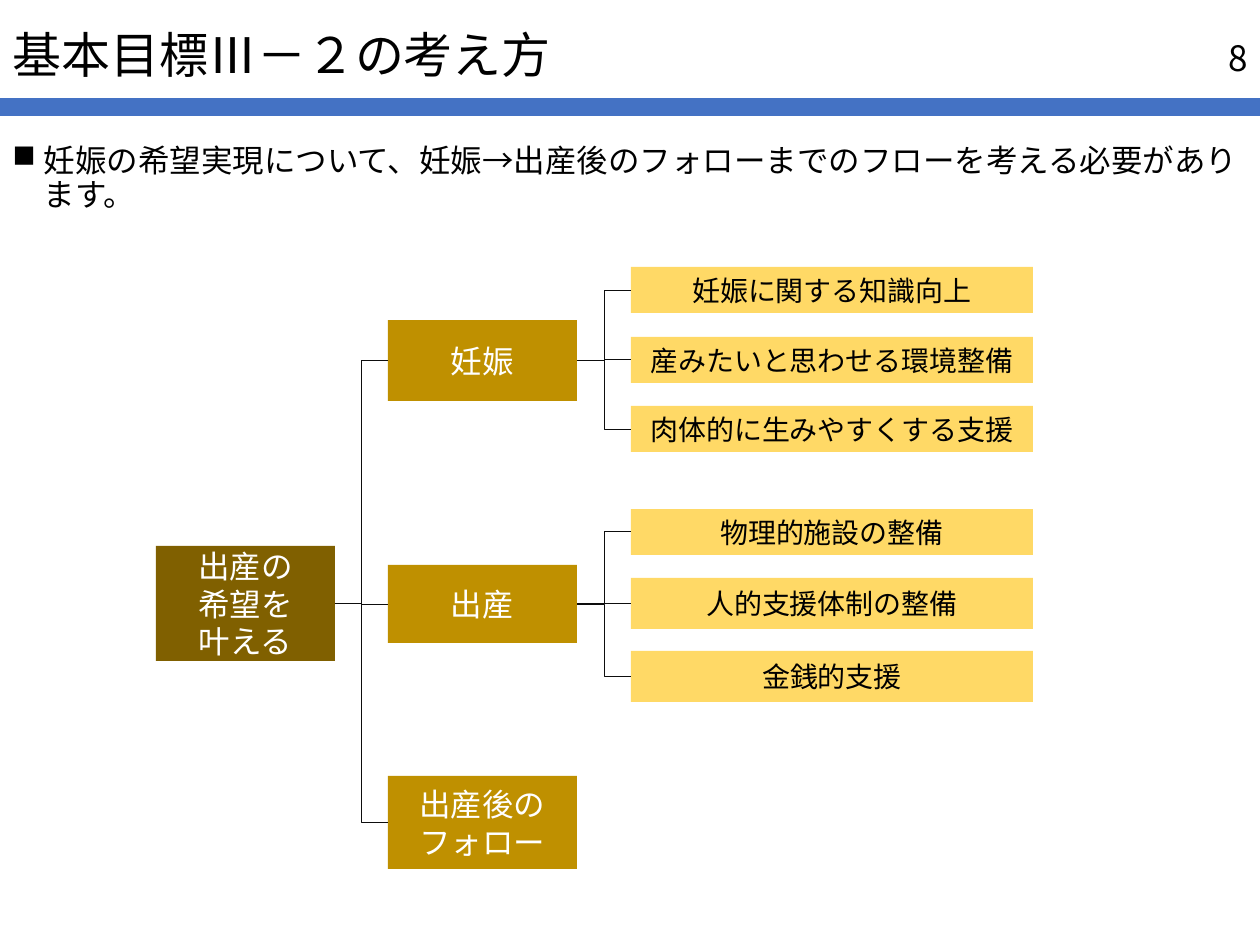
import dataclasses

import pptx
import pptx.dml.color
import pptx.enum.shapes
import pptx.enum.text
import pptx.oxml
import pptx.oxml.ns
import pptx.util

PX = 914400 / 126
ALIGN = pptx.enum.text.PP_ALIGN
ANCHOR = pptx.enum.text.MSO_ANCHOR
RECT = pptx.enum.shapes.MSO_SHAPE.RECTANGLE
ELBOW = pptx.enum.shapes.MSO_CONNECTOR.ELBOW


@dataclasses.dataclass(frozen=True)
class Theme:
    """Font, colours and type sizes of the slide."""
    font: str = "Noto Sans CJK JP"
    black: str = "000000"
    white: str = "FFFFFF"
    bar: str = "4472C4"
    line: str = "0D0D0D"
    root: str = "806000"
    branch: str = "BF9000"
    leaf: str = "FFD966"
    title_size: int = 28
    number_size: int = 20
    body_size: int = 18
    leaf_size: int = 16


THEME = Theme()
ROOT = (["出産の", "希望を", "叶える"], 279, 115)
BRANCHES = [
    ("妊娠", 53, 81, [("妊娠に関する知識向上", 0, 46),
                    ("産みたいと思わせる環境整備", 70, 46),
                    ("肉体的に生みやすくする支援", 139, 46)]),
    ("出産", 298, 78, [("物理的施設の整備", 242, 46),
                     ("人的支援体制の整備", 311, 51),
                     ("金銭的支援", 384, 51)]),
    ("出産後のフォロー", 509, 93, []),
]


def emu(*lengths):
    """Turn px lengths into EMU."""
    return [round(n * PX) for n in lengths]


def rgb(value):
    """Return the colour for a hex string."""
    return pptx.dml.color.RGBColor.from_string(value)


def write(shape, lines, size, color, align, anchor):
    """Fill a shape with one paragraph per line and return the paragraphs."""
    tf = shape.text_frame
    tf.word_wrap = True
    tf.auto_size = pptx.enum.text.MSO_AUTO_SIZE.NONE
    tf.vertical_anchor = anchor
    for i, line in enumerate(lines):
        p = tf.add_paragraph() if i else tf.paragraphs[0]
        p.alignment = align
        r = p.add_run()
        r.text = line
        r.font.size = pptx.util.Pt(size)
        r.font.name = THEME.font
        r.font.color.rgb = rgb(color)
        ea = pptx.oxml.ns.qn("a:ea")
        r.font._element.find(pptx.oxml.ns.qn("a:latin")).addnext(
            r.font._element.makeelement(ea, {"typeface": THEME.font}))
    return tf.paragraphs


def add_rect(s, box, fill):
    """Add a flat rectangle without outline."""
    sp = s.shapes.add_shape(RECT, *emu(*box))
    sp.shadow.inherit = False
    sp.fill.solid()
    sp.fill.fore_color.rgb = rgb(fill)
    sp.line.fill.background()
    return sp


def add_node(s, box, lines, fill, size, color):
    """Add one labelled box of the tree."""
    sp = add_rect(s, box, fill)
    write(sp, lines, size, color, ALIGN.CENTER, ANCHOR.MIDDLE)
    return sp


def add_link(s, parent, child):
    """Join the right side of a parent to the left side of a child."""
    link = s.shapes.add_connector(ELBOW, 0, 0, 0, 0)
    link.begin_connect(parent, 3)
    link.end_connect(child, 1)
    link.line.color.rgb = rgb(THEME.line)
    link.line.width = pptx.util.Pt(0.5)
    pptx.oxml.ns.qn("a:effectLst")
    sp_pr = link._element.spPr
    sp_pr.append(sp_pr.makeelement(pptx.oxml.ns.qn("a:effectLst"), {}))


def add_header(s, box):
    """Place the title, the page number and the bar below them."""
    x, y, w, h = box
    add_rect(s, (x, y + h - 18, w, 18), THEME.bar)
    title = s.shapes.title
    title.left, title.top, title.width, title.height = emu(x, y + 39, w, 37)
    p = write(title, ["基本目標Ⅲ－２の考え方"], THEME.title_size, THEME.black,
              ALIGN.LEFT, ANCHOR.MIDDLE)[0]
    p.line_spacing = 0.9
    number = s.shapes.add_textbox(*emu(x + w - 284, y + 33, 284, 50))
    write(number, ["8"], THEME.number_size, THEME.black, ALIGN.RIGHT, ANCHOR.MIDDLE)


def add_lead(s, box):
    """Place the bulleted lead sentence."""
    sp = s.shapes.add_textbox(*emu(*box))
    p = write(sp, ["妊娠の希望実現について、妊娠→出産後のフォローまでのフローを考える必要があります。"],
              THEME.body_size, THEME.black, ALIGN.LEFT, ANCHOR.TOP)[0]
    p.line_spacing = 0.9
    p.space_before = pptx.util.Pt(10)
    p_pr = p._p.get_or_add_pPr()
    indent = pptx.util.Inches(0.25)
    p_pr.set("marL", str(indent))
    p_pr.set("indent", str(-indent))
    p_pr.append(p_pr.makeelement(pptx.oxml.ns.qn("a:buChar"), {"char": "■"}))


def add_tree(s, box):
    """Place the root, its branches and their leaves with the links."""
    x, y, w, h = box
    lines, top, height = ROOT
    root = add_node(s, (x, y + top, 179, height), lines, THEME.root,
                    THEME.body_size, THEME.white)
    for label, top, height, leaves in BRANCHES:
        branch = add_node(s, (x + 232, y + top, 189, height), [label], THEME.branch,
                          THEME.body_size, THEME.white)
        add_link(s, root, branch)
        for text, leaf_top, leaf_height in leaves:
            leaf = add_node(s, (x + w - 402, y + leaf_top, 402, leaf_height), [text],
                            THEME.leaf, THEME.leaf_size, THEME.black)
            add_link(s, branch, leaf)


def main():
    """Build the slide and save it."""
    prs = pptx.Presentation()
    prs.slide_width, prs.slide_height = emu(1260, 945)
    s = prs.slides.add_slide(prs.slide_layouts[5])
    add_header(s, (0, 0, 1260, 116))
    add_lead(s, (0, 139, 1260, 98))
    add_tree(s, (156, 267, 877, 602))
    prs.save("out.pptx")


if __name__ == "__main__":
    main()
